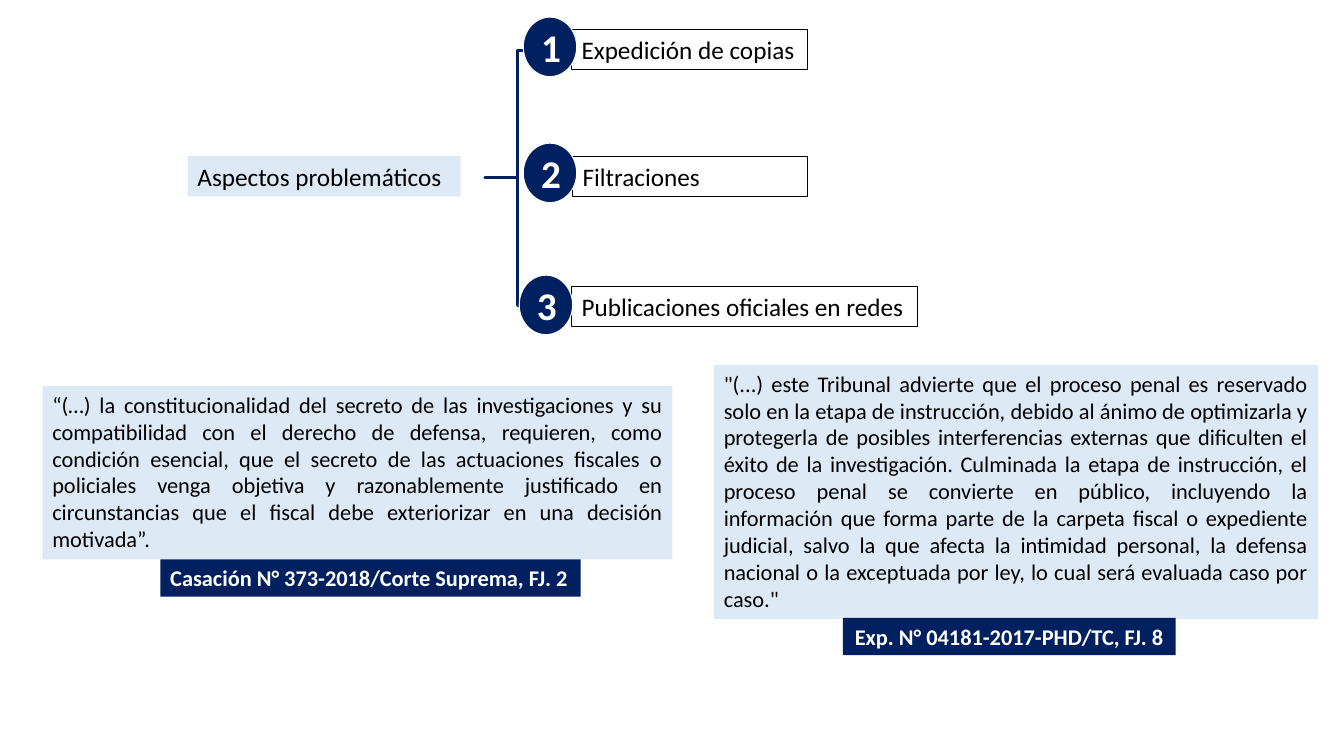
from pptx import Presentation
from pptx.dml.color import RGBColor
from pptx.enum.shapes import MSO_SHAPE
from pptx.enum.text import MSO_ANCHOR, MSO_AUTO_SIZE, PP_ALIGN
from pptx.util import Inches, Pt

NAVY = RGBColor(0x00, 0x20, 0x60)
PALE = RGBColor(0xDD, 0xEA, 0xF6)
WHITE = RGBColor(0xFF, 0xFF, 0xFF)
BLACK = RGBColor(0x00, 0x00, 0x00)

# Number, number left and top, label left, top and width, label
ISSUES = [
    ("1", 5.19, 0.17, 5.67, 0.29, 2.34, "Expedición de copias"),
    ("2", 5.19, 1.42, 5.68, 1.55, 2.33, "Filtraciones"),
    ("3", 5.15, 2.73, 5.67, 2.84, 3.43, "Publicaciones oficiales en redes"),
]
SECRECY = (
    "“(…) la constitucionalidad del secreto de las investigaciones y su "
    "compatibilidad con el derecho de defensa, requieren, como condición "
    "esencial, que el secreto de las actuaciones fiscales o policiales venga "
    "objetiva y razonablemente justificado en circunstancias que el fiscal "
    "debe exteriorizar en una decisión motivada”."
)
OPENNESS = (
    '"(...) este Tribunal advierte que el proceso penal es reservado solo en '
    "la etapa de instrucción, debido al ánimo de optimizarla y protegerla de "
    "posibles interferencias externas que dificulten el éxito de la "
    "investigación. Culminada la etapa de instrucción, el proceso penal se "
    "convierte en público, incluyendo la información que forma parte de la "
    "carpeta fiscal o expediente judicial, salvo la que afecta la intimidad "
    "personal, la defensa nacional o la exceptuada por ley, lo cual será "
    'evaluada caso por caso."'
)


class Board:
    def __init__(self, slide, face="Calibri"):
        self.slide = slide
        self.face = face

    def shape(self, kind, box, fill=None, line=None, width=1):
        item = self.slide.shapes.add_shape(kind, *map(Inches, box))
        item.shadow.inherit = False
        if fill is None:
            item.fill.background()
        else:
            item.fill.solid()
            item.fill.fore_color.rgb = fill
        if line is None:
            item.line.fill.background()
        else:
            item.line.color.rgb = line
            item.line.width = Pt(width)
        return item

    def label(self, item, text, size, color, bold, align):
        para = item.text_frame.paragraphs[0]
        para.text = text
        para.alignment = align
        font = para.font
        font.name = self.face
        font.size = Pt(size)
        font.bold = bold
        font.color.rgb = color

    def box(self, box, text, fill, line=None, size=18, color=BLACK,
            bold=False, align=PP_ALIGN.LEFT):
        item = self.shape(MSO_SHAPE.RECTANGLE, box, fill, line)
        frame = item.text_frame
        frame.word_wrap = True
        frame.auto_size = MSO_AUTO_SIZE.SHAPE_TO_FIT_TEXT
        frame.vertical_anchor = MSO_ANCHOR.TOP
        self.label(item, text, size, color, bold, align)

    def quote(self, box, text):
        self.box(box, text, PALE, size=16, align=PP_ALIGN.JUSTIFY)

    def source(self, box, text, align=PP_ALIGN.LEFT):
        self.box(box, text, NAVY, size=16, color=WHITE, bold=True, align=align)

    def number(self, left, top, text):
        item = self.shape(MSO_SHAPE.OVAL, (left, top, 0.53, 0.59),
                          NAVY, WHITE, 0.75)
        item.text_frame.vertical_anchor = MSO_ANCHOR.MIDDLE
        self.label(item, text, 28, WHITE, True, PP_ALIGN.CENTER)

    def brace(self, box):
        item = self.shape(MSO_SHAPE.LEFT_BRACE, box, line=NAVY, width=2.25)
        item.adjustments[0] = 0
        item.adjustments[1] = 0.5


def main():
    deck = Presentation()
    deck.slide_width = Inches(13.33)
    deck.slide_height = Inches(7.5)
    board = Board(deck.slides.add_slide(deck.slide_layouts[6]))

    board.box((1.86, 1.55, 2.71, 0.4), "Aspectos problemáticos", PALE)
    board.brace((4.81, 0.5, 0.64, 2.53))
    for digit, x, y, left, top, width, label in ISSUES:
        board.box((left, top, width, 0.4), label, WHITE, BLACK)
        board.number(x, y, digit)

    board.quote((0.42, 3.83, 6.25, 1.72), SECRECY)
    board.source((1.59, 5.55, 4.17, 0.37),
                 "Casación N° 373-2018/Corte Suprema, FJ. 2")
    board.quote((7.08, 3.62, 5.99, 2.52), OPENNESS)
    board.source((8.36, 6.13, 3.3, 0.37),
                 "Exp. N° 04181-2017-PHD/TC, FJ. 8", PP_ALIGN.CENTER)
    deck.save("out.pptx")


if __name__ == "__main__":
    main()
